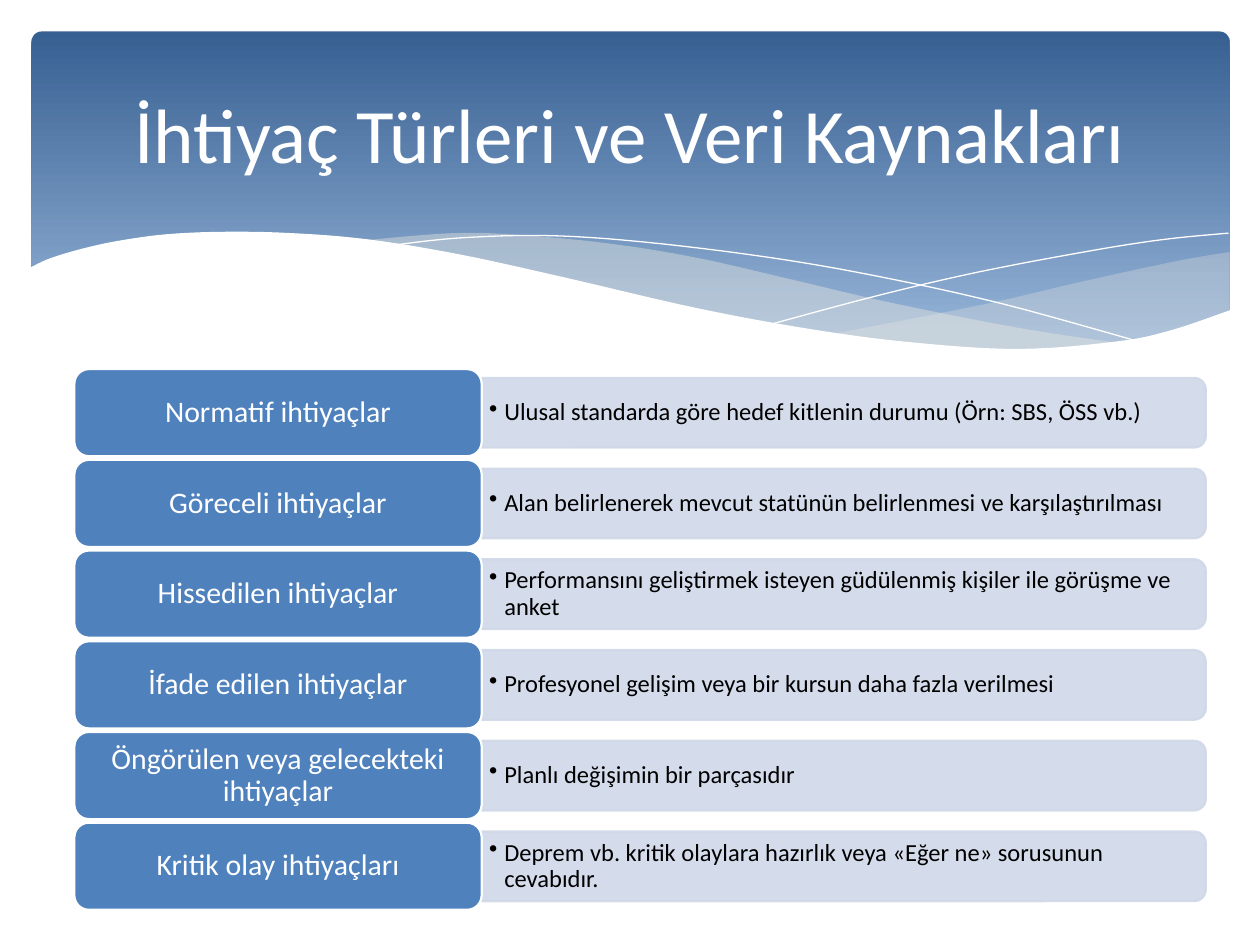
from lxml import etree
from pptx import Presentation
from pptx import util as u
from pptx.dml.color import RGBColor
from pptx.enum import shapes, text
from pptx.oxml import ns

COLORS = {"deep": "376092", "sky": "95B3D7", "veil": "EEECE1", "label": "4F81BD",
          "bar": "D0D8E8", "white": "FFFFFF", "black": "000000"}
FONT = "Calibri"
COLUMNS, ROWS = 100, 75
WIDTH, HEIGHT = u.Inches(10), u.Inches(7.5)

NEEDS = [
    ("Normatif ihtiyaçlar", "Ulusal standarda göre hedef kitlenin durumu (Örn: SBS, ÖSS vb.)"),
    ("Göreceli ihtiyaçlar", "Alan belirlenerek mevcut statünün belirlenmesi ve karşılaştırılması"),
    ("Hissedilen ihtiyaçlar",
     "Performansını geliştirmek isteyen güdülenmiş kişiler ile görüşme ve anket"),
    ("İfade edilen ihtiyaçlar", "Profesyonel gelişim veya bir kursun daha fazla verilmesi"),
    ("Öngörülen veya gelecekteki ihtiyaçlar", "Planlı değişimin bir parçasıdır"),
    ("Kritik olay ihtiyaçları",
     "Deprem vb. kritik olaylara hazırlık veya «Eğer ne» sorusunun cevabıdır."),
]

RIGHT_VEIL = [
    [(95.1, 17.5), (91, 18.2), (83.6, 19.8), (75.4, 21.7), (63.6, 24)],
    [(63.6, 24), (72, 25), (78.9, 25.3), (84.7, 24.9), (89.6, 24), (95.1, 22.2)]]
LEFT_VEIL = [
    [(86.8, 24.8), (78.2, 23.5), (68.1, 21.5), (60.4, 19.7), (53, 18), (46.4, 16.9),
     (39.5, 16.2), (33.6, 16), (26.1, 16.6)],
    [(26.1, 16.6), (33.7, 17.8), (42.4, 19.7), (50.5, 21.5), (59.3, 23.3), (68.4, 24.7),
     (78.2, 25.3), (86.8, 24.8)]]
FALLING_LINE = [(28.4, 17), (33.8, 16.4), (40.8, 16.2), (48.5, 16.7), (58.3, 17.9),
                (67, 19.4), (77, 21.6), (88.2, 24.7)]
RISING_LINE = [(58.8, 23.2), (67, 21), (75.1, 19.1), (84.1, 17.4), (89.9, 16.5), (95, 16)]
WAVE_EDGE = [(-0.2, 18.8), (1.5, 18), (4.2, 17.2), (7, 16.6), (10.7, 16.1), (15.2, 15.9),
             (20.5, 16), (26.7, 16.5), (34, 17.7), (42.2, 19.5), (53, 22), (62.3, 23.7),
             (70.1, 24.7), (78.4, 25.2), (86.2, 24.6), (90.5, 23.7), (95.2, 22.1)]
WAVE_FOOT = [(95.2, 30.4), (-0.2, 30.4)]


def place(left, top, width, height):
    """Turn grid columns and rows into slide lengths."""
    col, row = WIDTH / COLUMNS, HEIGHT / ROWS
    return [u.Emu(round(n)) for n in (left * col, top * row, width * col, height * row)]


def paint(color_format, name, alpha=None):
    """Set a named colour, with an optional opacity in percent."""
    color_format.rgb = RGBColor.from_string(COLORS[name])
    if alpha is not None:
        for rgb in color_format._xFill.iter(ns.qn("a:srgbClr")):
            etree.SubElement(rgb, ns.qn("a:alpha")).set("val", str(alpha * 1000))


def style(shape, fill=None, line=None, width=1.25, alpha=None):
    """Give a shape its fill and line, without a shadow."""
    shape.shadow.inherit = False
    for part, name in ((shape.fill, fill), (shape.line.fill, line)):
        if name:
            part.solid()
            paint(part.fore_color, name)
            if alpha is not None:
                rgb = part._xPr.find(ns.qn("a:solidFill"))[0]
                etree.SubElement(rgb, ns.qn("a:alpha")).set("val", str(alpha * 1000))
        else:
            part.background()
    if line:
        shape.line.width = u.Pt(width)


def write(frame, words, size, color, align, insets=(0.1, 0.05), spacing=None):
    """Set one formatted paragraph in the middle of a frame and return it."""
    frame.text = words
    frame.word_wrap = True
    frame.vertical_anchor = text.MSO_ANCHOR.MIDDLE
    frame.margin_left = frame.margin_right = u.Inches(insets[0])
    frame.margin_top = frame.margin_bottom = u.Inches(insets[1])
    paragraph = frame.paragraphs[0]
    paragraph.alignment = align
    paragraph.line_spacing = spacing
    font = paragraph.runs[0].font
    font.size, font.name = u.Pt(size), FONT
    paint(font.color, color)
    return paragraph


def smooth(anchors, steps=6):
    """Return points on a Catmull-Rom curve through the anchors."""
    padded = [anchors[0], *anchors, anchors[-1]]
    points = [anchors[0]]
    for a, b, c, d in zip(padded, padded[1:], padded[2:], padded[3:]):
        for t in (step / steps for step in range(1, steps + 1)):
            points.append(tuple(
                (2 * q + (r - p) * t + (2 * p - 5 * q + 4 * r - s) * t ** 2
                 + (3 * q - p - 3 * r + s) * t ** 3) / 2
                for p, q, r, s in zip(a, b, c, d)))
    return points


def draw_outline(slide, box, points, close=True):
    """Draw a freeform whose points count from the corner of the box."""
    spots = [place(box[0] + x, box[1] + y, 0, 0)[:2] for x, y in points]
    builder = slide.shapes.build_freeform(*spots[0])
    builder.add_line_segments(spots[1:], close=close)
    return builder.convert_to_shape()


def add_banner(slide, box):
    """Draw the gradient banner with its veils, hairlines and wave."""
    banner = slide.shapes.add_shape(shapes.MSO_SHAPE.ROUNDED_RECTANGLE, *place(*box))
    banner.adjustments[0] = 0.03
    style(banner)
    banner.fill.gradient()
    banner.fill.gradient_angle = 270
    for stop, name, position in zip(banner.fill.gradient_stops, ("deep", "sky"), (0, 0.9)):
        paint(stop.color, name)
        stop.position = position
    for (upper, lower), alpha in ((RIGHT_VEIL, 29), (LEFT_VEIL, 40)):
        veil = draw_outline(slide, box, smooth(upper) + smooth(lower))
        style(veil, fill="veil", alpha=alpha)
    for anchors in (FALLING_LINE, RISING_LINE):
        hairline = draw_outline(slide, box, smooth(anchors), close=False)
        style(hairline, line="white", width=0)
    style(draw_outline(slide, box, smooth(WAVE_EDGE) + WAVE_FOOT), fill="white")


def add_title(slide, box, words):
    """Place the title in front of the banner."""
    title = slide.shapes.title
    title.left, title.top, title.width, title.height = place(*box)
    write(title.text_frame, words, 44, "white", text.PP_ALIGN.CENTER)
    slide.shapes._spTree.append(title._element)


def add_bullet(paragraph, indent):
    """Give a paragraph a hanging round bullet."""
    properties = paragraph._p.get_or_add_pPr()
    properties.set("marL", str(indent))
    properties.set("indent", str(-indent))
    etree.SubElement(properties, ns.qn("a:buChar")).set("char", "•")


def add_need(slide, box, name, source):
    """Draw one row: the need on the left, its data source on the right."""
    left, top, width, height = box
    label_width, bar_height = 0.36 * width, 0.8 * height
    bar_left, bar_width = left + label_width, width - label_width
    middle = top + height / 2
    bar = slide.shapes.add_shape(
        shapes.MSO_SHAPE.ROUND_2_SAME_RECTANGLE,
        *place(bar_left + (bar_width - bar_height) / 2, middle - bar_width / 2,
               bar_height, bar_width))
    bar.rotation = 90
    style(bar, fill="bar", line="bar", alpha=90)
    detail = slide.shapes.add_textbox(
        *place(bar_left, middle - bar_height / 2, bar_width - 0.3, bar_height))
    add_bullet(write(detail.text_frame, source, 14, "black", text.PP_ALIGN.LEFT,
                     (0.06, 0.03), 0.9), u.Inches(0.12))
    label = slide.shapes.add_shape(shapes.MSO_SHAPE.ROUNDED_RECTANGLE,
                                   *place(left, top, label_width, height))
    style(label, fill="label", line="white")
    write(label.text_frame, name, 17, "white", text.PP_ALIGN.CENTER, (0.07, 0.04), 0.9)


def add_needs(slide, box, needs):
    """Stack the rows evenly in the box."""
    left, top, width, height = box
    pitch = height / len(needs)
    for index, (name, source) in enumerate(needs):
        add_need(slide, (left, top + index * pitch, width, 0.96 * pitch), name, source)


def main():
    """Build the slide and save it."""
    deck = Presentation()
    deck.slide_width, deck.slide_height = WIDTH, HEIGHT
    slide = deck.slides.add_slide(deck.slide_layouts[5])
    add_banner(slide, (2.5, 2.5, 95.1, 27))
    add_needs(slide, (5.9, 29.3, 89.8, 43.2), NEEDS)
    add_title(slide, (5, 3.7, 90, 13.7), "İhtiyaç Türleri ve Veri Kaynakları")
    deck.save("out.pptx")


if __name__ == "__main__":
    main()
